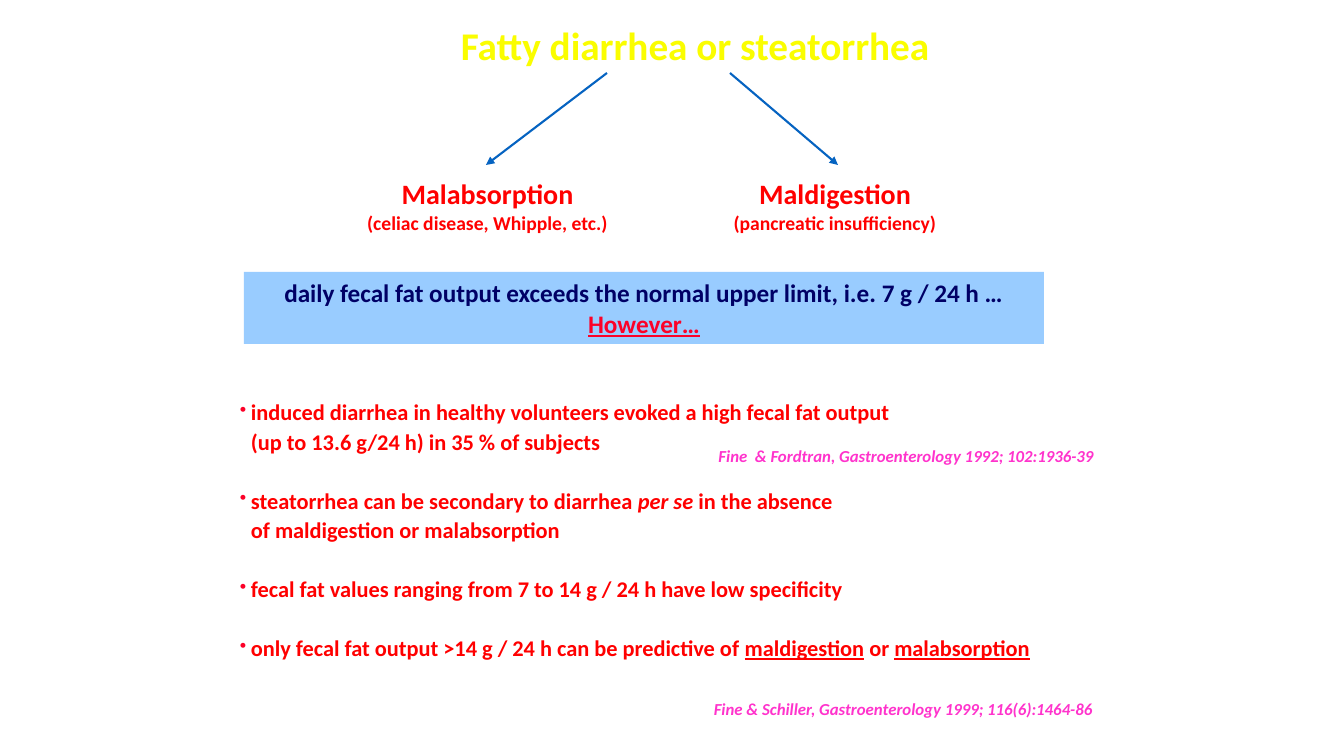
from lxml import etree
from pptx import Presentation
from pptx import util as u
from pptx.dml.color import RGBColor
from pptx.enum import shapes, text
from pptx.oxml.ns import qn

WIDTH, HEIGHT = 1344, 756
PX = u.Inches(7.5) / HEIGHT
FONT = "Calibri"

YELLOW = RGBColor(0xFA, 0xFD, 0x00)
RED = RGBColor(0xFF, 0x00, 0x00)
CRIMSON = RGBColor(0xFC, 0x01, 0x28)
NAVY = RGBColor(0x00, 0x00, 0x66)
SKY = RGBColor(0x99, 0xCC, 0xFF)
PINK = RGBColor(0xFF, 0x33, 0xCC)
BLUE = RGBColor(0x05, 0x63, 0xC1)

CENTER, RIGHT = text.PP_ALIGN.CENTER, text.PP_ALIGN.RIGHT
UNDERLINE, ITALIC = {"underline": True}, {"italic": True}

# Boxes are left, top, width, height in px; a line is a list of (text, style) runs.
TITLE = ((451, 16, 496, 57), "Fatty diarrhea or steatorrhea")
CAUSES = [
    ((356, 172, 263, 68), "Malabsorption", "(celiac disease, Whipple, etc.)"),
    ((722, 172, 226, 68), "Maldigestion", "(pancreatic insufficiency)"),
]
ARROWS = [((607, 73), (486, 165)), ((730, 73), (838, 165))]
BANNER_BOX = (244, 272, 800, 72)
BANNER = [
    ("daily fecal fat output exceeds the normal upper limit, i.e. 7 g / 24 h … ", {}),
    ("However…", {"underline": True, "color": CRIMSON}),
]
FINDINGS_BOX = (230, 391, 825, 279)
FINDINGS = [
    [
        [("induced diarrhea in healthy volunteers evoked a high fecal fat output", {})],
        [("(up to 13.6 g/24 h) in 35 % of subjects", {})],
    ],
    [
        [("steatorrhea can be secondary to diarrhea ", {}), ("per se ", ITALIC),
         ("in the absence", {})],
        [("of maldigestion or malabsorption", {})],
    ],
    [[("fecal fat values ranging from 7 to 14 g / 24 h have low specificity", {})]],
    [
        [("only fecal fat output >14 g / 24 h can be predictive of ", {}),
         ("maldigestion", UNDERLINE), (" or ", {}), ("malabsorption", UNDERLINE)],
    ],
]
CITATIONS = [
    ((667, 441, 437, 30), "Fine  & Fordtran, Gastroenterology 1992; 102:1936-39"),
    ((698, 694, 405, 30), "Fine & Schiller, Gastroenterology 1999; 116(6):1464-86"),
]
FINDING_INDENT = 11
FINDING_GAP = u.Pt(21)


def emu(lengths):
    return [round(length * PX) for length in lengths]


def add_runs(paragraph, runs, size, color, italic=False):
    for words, style in runs:
        run = paragraph.add_run()
        run.text = words
        font = run.font
        font.name, font.size, font.bold = FONT, u.Pt(size), True
        font.italic = style.get("italic", italic)
        font.underline = style.get("underline", False)
        font.color.rgb = style.get("color", color)


def add_text(slide, box, lines, color, align=None, italic=False, wrap=False):
    """Add a text box with one paragraph for each (words, size) line."""
    frame = slide.shapes.add_textbox(*emu(box)).text_frame
    frame.word_wrap = wrap
    for number, (words, size) in enumerate(lines):
        paragraph = frame.add_paragraph() if number else frame.paragraphs[0]
        paragraph.alignment = align
        add_runs(paragraph, [(words, {})], size, color, italic)


def add_banner(slide):
    shape = slide.shapes.add_shape(shapes.MSO_SHAPE.RECTANGLE, *emu(BANNER_BOX))
    shape.shadow.inherit = False
    shape.fill.solid()
    shape.fill.fore_color.rgb = SKY
    shape.line.fill.background()
    shape.text_frame.word_wrap = True
    paragraph = shape.text_frame.paragraphs[0]
    paragraph.alignment = CENTER
    add_runs(paragraph, BANNER, 18, NAVY)


def indent_line(paragraph, bulleted):
    """Set the hanging indent, with a bullet on the first line of a finding."""
    properties = paragraph._p.get_or_add_pPr()
    indent = round(FINDING_INDENT * PX)
    properties.set("marL", str(indent))
    properties.set("indent", str(-indent if bulleted else 0))
    if bulleted:
        color = etree.SubElement(properties, qn("a:buClr"))
        etree.SubElement(color, qn("a:srgbClr"), val=str(CRIMSON))
        etree.SubElement(properties, qn("a:buSzPct"), val="85000")
        etree.SubElement(properties, qn("a:buChar"), char="•")


def add_findings(slide):
    frame = slide.shapes.add_textbox(*emu(FINDINGS_BOX)).text_frame
    frame.word_wrap = False
    paragraph = frame.paragraphs[0]
    for item, lines in enumerate(FINDINGS):
        for number, runs in enumerate(lines):
            if item or number:
                paragraph = frame.add_paragraph()
            paragraph.line_spacing = 1.1
            if item and not number:
                paragraph.space_before = FINDING_GAP
            indent_line(paragraph, bulleted=number == 0)
            add_runs(paragraph, runs, 16, RED)


def add_arrow(slide, start, end):
    arrow = slide.shapes.add_connector(
        shapes.MSO_CONNECTOR.STRAIGHT, *emu(start + end))
    arrow.line.color.rgb = BLUE
    arrow.line.width = u.Pt(1.5)
    etree.SubElement(arrow.line._get_or_add_ln(), qn("a:tailEnd"), type="triangle")
    etree.SubElement(arrow._element.spPr, qn("a:effectLst"))


def main():
    presentation = Presentation()
    presentation.slide_width, presentation.slide_height = emu((WIDTH, HEIGHT))
    slide = presentation.slides.add_slide(presentation.slide_layouts[6])

    add_banner(slide)
    title_box, title = TITLE
    add_text(slide, title_box, [(title, 28)], YELLOW)
    add_findings(slide)
    for box, citation in CITATIONS:
        add_text(slide, box, [(citation, 12)], PINK, RIGHT, italic=True, wrap=True)
    for start, end in ARROWS:
        add_arrow(slide, start, end)
    for box, cause, examples in CAUSES:
        add_text(slide, box, [(cause, 20), (examples, 14)], RED, CENTER)

    presentation.save("out.pptx")


if __name__ == "__main__":
    main()
